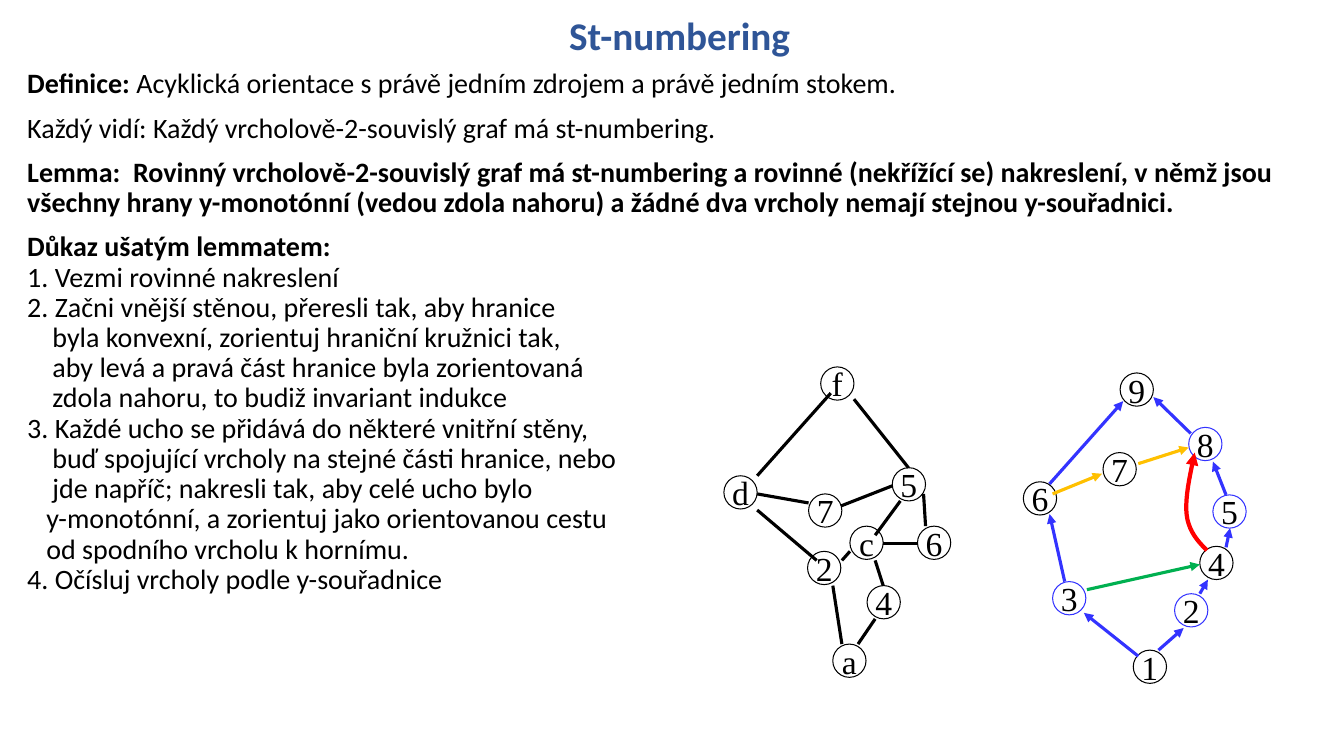
from dataclasses import dataclass

from lxml import etree
from pptx import Presentation
from pptx.dml.color import RGBColor
from pptx.enum.shapes import MSO_CONNECTOR, MSO_SHAPE
from pptx.enum.text import MSO_ANCHOR, MSO_AUTO_SIZE, PP_ALIGN
from pptx.oxml.ns import qn
from pptx.util import Inches, Pt

STRAIGHT = MSO_CONNECTOR.STRAIGHT
OVAL = MSO_SHAPE.OVAL
BOTTOM, MIDDLE, TOP = MSO_ANCHOR.BOTTOM, MSO_ANCHOR.MIDDLE, MSO_ANCHOR.TOP
CENTER, LEFT = PP_ALIGN.CENTER, PP_ALIGN.LEFT
NO_FIT = MSO_AUTO_SIZE.NONE

CELL = Inches(0.1)  # one grid column or row
NODE = 3.3  # node diameter in cells
CURVE_STEPS = 10


@dataclass(frozen=True)
class Theme:
    sans: str = "Calibri"
    serif: str = "Times New Roman"
    title_size: int = 28
    body_size: int = 20
    node_size: int = 24
    heading: str = "2F5597"
    ink: str = "000000"
    paper: str = "FFFFFF"
    blue: str = "3333FF"
    green: str = "00B050"
    gold: str = "FFC000"
    red: str = "FF0000"


THEME = Theme()


def cells(*counts):
    return [round(count * CELL) for count in counts]


def write(paragraph, text, *, font, size, color, bold=False, align=LEFT):
    paragraph.alignment = align
    run = paragraph.add_run()
    run.text = text
    run.font.name = font
    run.font.size = Pt(size)
    run.font.bold = bold
    run.font.color.rgb = RGBColor.from_string(color)


class GraphSlide:
    def __init__(self, slide, theme):
        self.slide = slide
        self.theme = theme

    def place(self, placeholder, box, anchor):
        placeholder.left, placeholder.top, placeholder.width, placeholder.height = cells(*box)
        frame = placeholder.text_frame
        frame.auto_size = NO_FIT
        frame.word_wrap = True
        frame.vertical_anchor = anchor
        return frame

    def title(self, text, box):
        heading = self.place(self.slide.shapes.title, box, BOTTOM).paragraphs[0]
        heading.line_spacing = 0.9
        write(heading, text, font=self.theme.sans, size=self.theme.title_size,
              color=self.theme.heading, bold=True, align=CENTER)

    def body(self, lines, box):
        """Each line is (space before in points, indent in cells, [(text, bold), ...])."""
        frame = self.place(self.slide.placeholders[1], box, TOP)
        for index, (gap, indent, parts) in enumerate(lines):
            line = frame.add_paragraph() if index else frame.paragraphs[0]
            line.line_spacing = 0.9
            line.space_before = Pt(gap)
            properties = line._p.get_or_add_pPr()
            properties.set("marL", str(round(indent * CELL)))
            properties.set("indent", "0")
            for text, bold in parts:
                write(line, text, font=self.theme.sans, size=self.theme.body_size,
                      color=self.theme.ink, bold=bold)

    def node(self, label, left, top, color):
        circle = self.slide.shapes.add_shape(OVAL, *cells(left, top, NODE, NODE))
        circle.shadow.inherit = False
        circle.fill.solid()
        circle.fill.fore_color.rgb = RGBColor.from_string(self.theme.paper)
        self.stroke(circle, color, 0.75)
        frame = circle.text_frame
        frame.word_wrap = False
        frame.vertical_anchor = MIDDLE
        write(frame.paragraphs[0], label, font=self.theme.serif,
              size=self.theme.node_size, color=self.theme.ink, align=CENTER)

    def stroke(self, shape, color, width, arrow=False):
        shape.line.color.rgb = RGBColor.from_string(color)
        shape.line.width = Pt(width)
        if arrow:
            outline = shape._element.spPr.find(qn("a:ln"))
            etree.SubElement(outline, qn("a:tailEnd"), type="triangle")

    def edge(self, ends, color, arrow):
        connector = self.slide.shapes.add_connector(STRAIGHT, *cells(*ends))
        self.stroke(connector, color, 2.25, arrow)
        etree.SubElement(connector._element.spPr, qn("a:effectLst"))

    def curved_edge(self, start, curves, color):
        """Draw an arrow along cubic curves, each given as two controls and an end."""
        points, origin = [], start
        for control_a, control_b, end in curves:
            for step in range(1, CURVE_STEPS + 1):
                t = step / CURVE_STEPS
                weights = ((1 - t) ** 3, 3 * t * (1 - t) ** 2, 3 * t ** 2 * (1 - t), t ** 3)
                corners = (origin, control_a, control_b, end)
                points.append(cells(*(sum(w * corner[axis] for w, corner in zip(weights, corners))
                                      for axis in (0, 1))))
            origin = end
        builder = self.slide.shapes.build_freeform(*cells(*start))
        builder.add_line_segments(points, close=False)
        ear = builder.convert_to_shape()
        ear.shadow.inherit = False
        ear.fill.background()
        self.stroke(ear, color, 3, arrow=True)

    def graph(self, nodes, edges, arrows=False):
        """Draw nodes and edges, both grouped by colour."""
        for color, places in nodes.items():
            for label, (left, top) in places.items():
                self.node(label, left, top, color)
        for color, lines in edges.items():
            for ends in lines:
                self.edge(ends, color, arrows)


STATEMENTS = [
    [("Definice: ", True),
     ("Acyklická orientace s právě jedním zdrojem a právě jedním stokem.", False)],
    [("Každý vidí: Každý vrcholově-2-souvislý graf má st-numbering.", False)],
    [("Lemma:  Rovinný vrcholově-2-souvislý graf má st-numbering a rovinné (nekřížící se) "
      "nakreslení, v němž jsou všechny hrany y-monotónní (vedou zdola nahoru) a žádné dva "
      "vrcholy nemají stejnou y-souřadnici.", True)],
    [("Důkaz ušatým lemmatem:", True)],
]
PROOF = [
    (0, "1. Vezmi rovinné nakreslení"),
    (0, "2. Začni vnější stěnou, přeresli tak, aby hranice"),
    (2.5, "byla konvexní, zorientuj hraniční kružnici tak,"),
    (2.5, "aby levá a pravá část hranice byla zorientovaná"),
    (2.5, "zdola nahoru, to budiž invariant indukce"),
    (0, "3. Každé ucho se přidává do některé vnitřní stěny,"),
    (2.5, "buď spojující vrcholy na stejné části hranice, nebo"),
    (2.5, "jde napříč; nakresli tak, aby celé ucho bylo"),
    (1.9, "y-monotónní, a zorientuj jako orientovanou cestu"),
    (1.9, "od spodního vrcholu k hornímu."),
    (0, "4. Očísluj vrcholy podle y-souřadnice"),
]

PLAIN_NODES = {THEME.ink: {
    "d": (71.8, 47.2), "c": (84.3, 52.2), "f": (81.4, 36.4), "a": (82.6, 63.9),
    "2": (80.1, 54.7), "5": (88.5, 46.4), "6": (91, 52.2), "4": (86, 58.1), "7": (80.2, 49),
}}
PLAIN_EDGES = {THEME.ink: [
    (75.1, 50.6, 81, 55.6), (82.6, 58.1, 83.5, 63.9), (83.5, 55.6, 84.3, 54.7),
    (85.1, 63.9, 86.8, 61.4), (86.8, 55.6, 87.6, 58.1), (87.6, 53.9, 91, 53.9),
    (86.8, 53.1, 89.3, 49.7), (84.7, 39.6, 90.1, 46.4), (91.6, 49, 91.8, 52.2),
    (82.4, 39, 75.1, 47.2), (75.1, 49, 80.2, 49.9), (83.4, 50.2, 88.5, 48.2),
]}
NUMBERED_NODES = {
    THEME.ink: {"6": (101.5, 47.8), "4": (119, 54.2), "9": (111.1, 37),
                "1": (112.4, 64.5), "7": (109.4, 44.9)},
    THEME.blue: {"3": (104.4, 57.7), "8": (117.9, 42.4), "5": (120.3, 49.1), "2": (116.5, 58.9)},
}
NUMBERED_EDGES = {
    THEME.blue: [
        (105.6, 57.7, 104.1, 51), (112.9, 65.1, 107.5, 60.8), (114.9, 64.5, 117.4, 62.3),
        (119, 58.9, 119.8, 57.5), (118.1, 43, 114.4, 39.4), (104.1, 48, 111.4, 39.8),
        (121.6, 54.3, 122, 52.4), (121.6, 49.1, 120.3, 45.8),
    ],
    THEME.green: [(107.8, 58.5, 119, 56)],
    THEME.gold: [(104.4, 49, 109.3, 47), (112.9, 46, 117.9, 44.4)],
}
EAR_START = (119.7, 54.6)
EAR_CURVES = [((118.8, 53.7), (117.9, 52.7), (117.7, 51.1)),
              ((117.5, 49.5), (118, 47.2), (118.5, 44.9))]


def main():
    deck = Presentation()
    deck.slide_width, deck.slide_height = Inches(13.33), Inches(7.5)
    page = GraphSlide(deck.slides.add_slide(deck.slide_layouts[0]), THEME)
    page.title("St-numbering", (17.4, 0.3, 100, 6.1))
    page.body([(10, 0, parts) for parts in STATEMENTS]
              + [(0, indent, [(text, False)]) for indent, text in PROOF],
              (1.7, 6.4, 129.9, 67.2))
    page.graph(PLAIN_NODES, PLAIN_EDGES)
    page.graph(NUMBERED_NODES, NUMBERED_EDGES, arrows=True)
    page.curved_edge(EAR_START, EAR_CURVES, THEME.red)
    deck.save("out.pptx")


if __name__ == "__main__":
    main()
